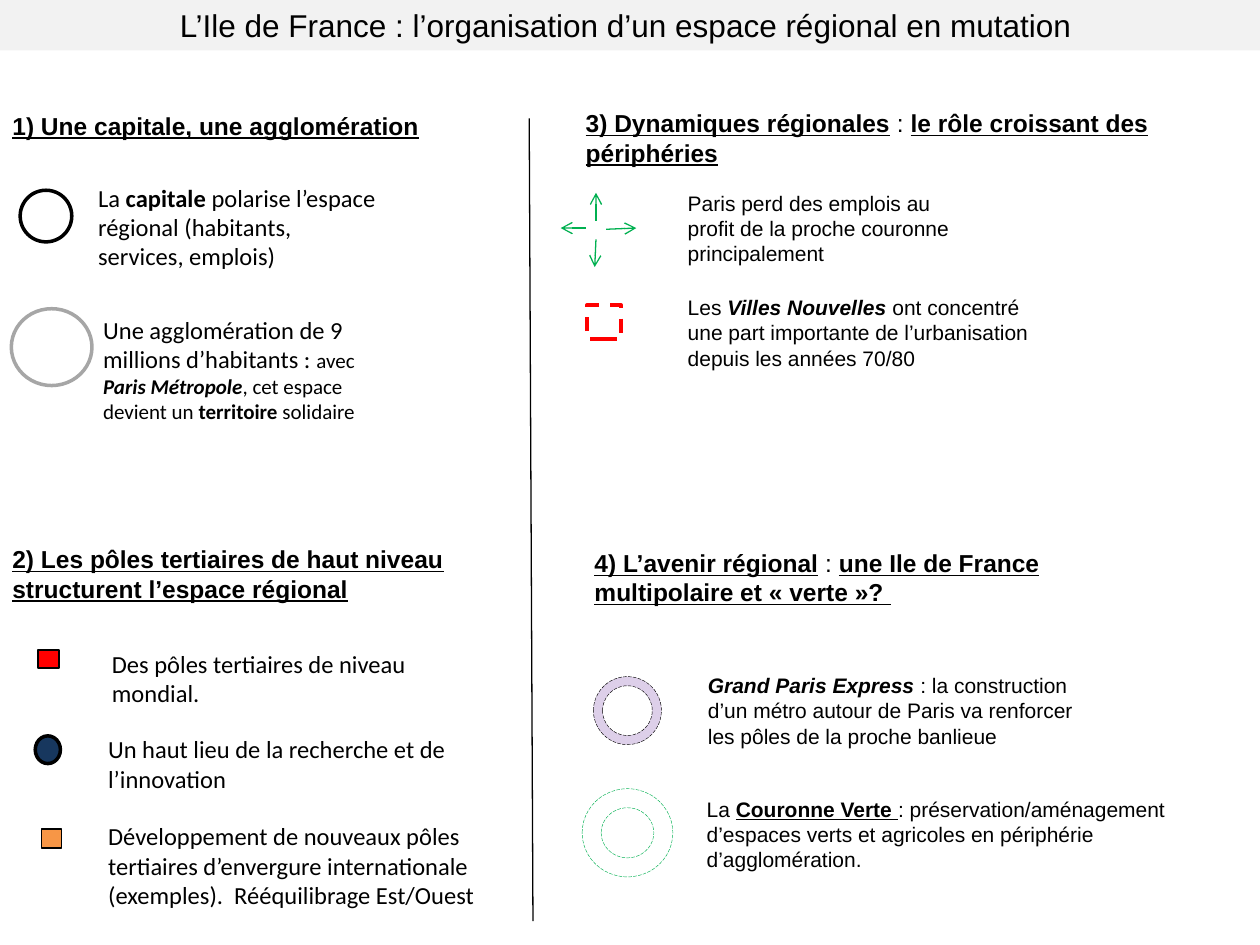
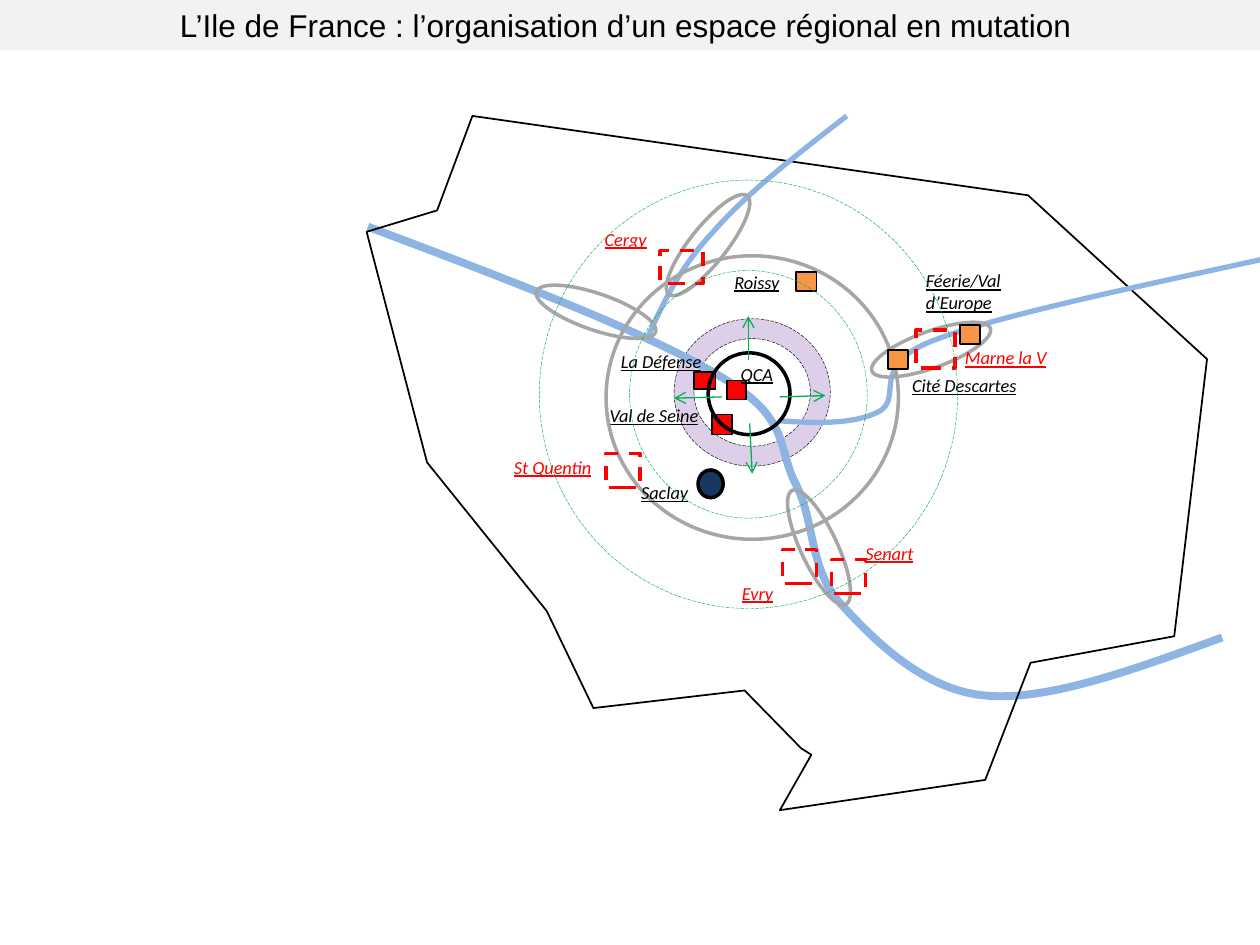
from dataclasses import dataclass

from lxml import etree
from pptx import Presentation
from pptx import util as u
from pptx.dml.color import RGBColor
from pptx.enum import dml, shapes, text
from pptx.oxml.ns import qn


@dataclass(frozen=True)
class Theme:
    cell: int = u.Inches(1)
    cols: float = 10
    rows: float = 7.5
    black: str = "000000"
    white: str = "FFFFFF"
    band: str = "F2F2F2"
    red: str = "FF0000"
    orange: str = "F79646"
    navy: str = "17375E"
    gray: str = "A6A6A6"
    green: str = "00B050"
    violet: str = "7030A0"
    water: str = "8EB4E3"
    sans: str = "Arial"
    body: str = "Calibri"
    title: float = 18
    head: float = 14
    note: float = 12
    label: float = 10.5
    thin: float = 0.75


T = Theme()
FORM = shapes.MSO_SHAPE
DASH = dml.MSO_LINE.DASH
LONG = dml.MSO_LINE.LONG_DASH

SIGNS = {
    "capital": (FORM.OVAL, None, T.black, 2, None),
    "city": (FORM.OVAL, T.white, T.gray, 2, None),
    "urban": (FORM.OVAL, None, T.gray, 2, None),
    "pole": (FORM.RECTANGLE, T.red, T.black, 1, None),
    "lab": (FORM.OVAL, T.navy, T.black, 2, None),
    "growth": (FORM.RECTANGLE, T.orange, T.black, 1, None),
    "town": (FORM.RECTANGLE, None, T.red, 2, DASH),
    "metro": (FORM.DONUT, T.violet, T.black, 0.25, LONG),
    "belt": (FORM.DONUT, None, T.green, 0.25, LONG),
}
RINGS = {"metro": 0.135, "belt": 0.216}
METRO_ALPHA = 23

TITLE = "L’Ile de France : l’organisation d’un espace régional en mutation "

HEADS = [
    ((0, 0.83, 3.89, 0.34), [("1) Une capitale, une agglomération", "bu")]),
    ((0, 4.27, 3.76, 0.57),
     [("2) Les pôles tertiaires de haut niveau structurent l’espace régional", "bu")]),
    ((4.55, 0.81, 5.45, 0.57),
     [("3) Dynamiques régionales", "bu"), (" : ", ""),
      ("le rôle croissant des périphéries", "bu")]),
    ((4.62, 4.3, 4.56, 0.57),
     [("4) L’avenir régional", "bu"), (" : ", ""),
      ("une Ile de France multipolaire et « verte »? ", "bu")]),
]

LEFT = [
    ((0.68, 1.4, 2.45, 0.81),
     [("La ", ""), ("capitale", "b"),
      (" polarise l’espace régional (habitants, services, emplois)", "")]),
    ((0.72, 2.45, 2.28, 0.98),
     [("Une agglomération de 9 millions d’habitants : ", ""), ("avec ", "", T.note),
      ("Paris Métropole", "bi", T.note), (", cet espace devient un ", "", T.note),
      ("territoire", "b", T.note), (" solidaire", "", T.note)]),
    ((0.79, 5.1, 2.96, 0.57), [("Des pôles tertiaires de niveau mondial.", "")]),
    ((0.76, 5.78, 2.96, 0.57),
     [("Un haut lieu de la recherche et de l’innovation", "")]),
    ((0.76, 6.47, 3.55, 0.81),
     [("Développement de nouveaux pôles tertiaires d’envergure internationale "
       "(exemples).  Rééquilibrage Est/Ouest", "")]),
]

RIGHT = [
    ((5.36, 1.46, 2.32, 0.7),
     [("Paris perd des emplois au profit de la proche couronne principalement", "")]),
    ((5.36, 2.29, 2.91, 0.71),
     [("Les ", ""), ("Villes Nouvelles ", "bi"),
      ("ont concentré une part importante de l’urbanisation depuis les années 70/80", "")]),
    ((5.52, 5.29, 3.3, 0.71),
     [("Grand Paris Express ", "bi"),
      (": la construction d’un métro autour de Paris va renforcer "
       "les pôles de la proche banlieue", "")]),
    ((5.51, 6.27, 4.49, 0.71),
     [("La ", ""), ("Couronne Verte ", "bu"),
      (": préservation/aménagement d’espaces verts et agricoles "
       "en périphérie d’agglomération.", "")]),
]

KEYS = [
    ("capital", (0.16, 1.51, 0.41, 0.41)),
    ("city", (0.09, 2.45, 0.64, 0.61)),
    ("pole", (0.3, 5.16, 0.17, 0.14)),
    ("lab", (0.28, 5.84, 0.2, 0.22)),
    ("growth", (0.33, 6.58, 0.16, 0.15)),
    ("town", (4.66, 2.42, 0.27, 0.27)),
    ("metro", (4.71, 5.37, 0.54, 0.54)),
    ("belt", (4.62, 6.26, 0.72, 0.7)),
]
KEY_FLOWS = [
    ((4.73, 1.75), (4.73, 1.53)), ((4.81, 1.82), (5.05, 1.81)),
    ((4.65, 1.81), (4.45, 1.81)), ((4.73, 1.9), (4.72, 2.12)),
]

SEINE = [
    (2.92, 1.8), (4.04, 2.22), (5.16, 2.65), (5.72, 2.99), (6.29, 3.33),
    (6.16, 3.55), (6.32, 3.85), (6.47, 4.15), (6.42, 4.51), (6.67, 4.79),
    (6.92, 5.06), (7.31, 5.47), (7.81, 5.52), (8.31, 5.57), (9.01, 5.31), (9.7, 5.06),
]
MARNE = [
    (10.01, 2.06), (8.96, 2.29), (7.9, 2.51), (7.39, 2.71), (6.89, 2.91),
    (7.18, 3.16), (6.97, 3.27), (6.77, 3.37), (6.47, 3.36), (6.18, 3.34),
]
OISE = [
    (6.72, 0.92), (6.32, 1.23), (5.92, 1.54), (5.66, 1.84),
    (5.39, 2.13), (5.26, 2.41), (5.13, 2.7),
]
REGION = [
    (3.75, 0.92), (8.16, 1.55), (9.58, 2.85), (9.32, 5.05), (8.18, 5.26),
    (7.82, 6.19), (6.19, 6.43), (6.44, 5.99), (6.36, 5.94), (5.91, 5.48),
    (4.71, 5.62), (4.34, 4.85), (3.39, 3.67), (2.91, 1.84), (3.47, 1.67),
]
POLES = [(5.65, 3.29, 0.16, 0.16), (5.51, 2.95, 0.17, 0.14), (5.77, 3.02, 0.15, 0.15)]
LOBES = [(6.89, 2.63, 340.2), (6, 4.2, 64.9), (5.12, 1.8, 308.5), (4.23, 2.33, 198.8)]
GROWTH = [(6.32, 2.16), (7.62, 2.58), (7.05, 2.78)]
TOWNS = [
    (5.24, 1.99, 0.34, 0.26), (7.27, 2.62, 0.31, 0.3), (6.6, 4.44, 0.27, 0.27),
    (6.21, 4.36, 0.27, 0.27), (4.81, 3.6, 0.27, 0.27),
]
CORE_NAMES = [
    ("Val de Seine", (4.74, 3.16, 1.01, 0.29)),
    ("QCA", (5.78, 2.83, 0.55, 0.29)),
    ("La Défense", (4.83, 2.73, 0.95, 0.28)),
]
OUTER_NAMES = [
    ("Saclay", (4.99, 3.77, 1.01, 0.29)),
    ("Roissy", (5.73, 2.1, 0.74, 0.28)),
    ("Féerie/Val d’Europe", (7.25, 2.09, 1.11, 0.47)),
    ("Cité Descartes", (7.14, 2.92, 1.47, 0.29)),
]
TOWN_NAMES = [
    ("Senart", (6.77, 4.25, 0.97, 0.29)),
    ("Evry", (5.79, 4.57, 0.56, 0.29)),
    ("Marne la V", (7.56, 2.7, 1.18, 0.29)),
    ("St Quentin", (3.98, 3.57, 1.03, 0.29)),
    ("Cergy", (4.7, 1.76, 0.64, 0.29)),
]
MAP_FLOWS = [
    ((5.95, 3.36), (5.97, 3.76)), ((6.19, 3.15), (6.55, 3.14)),
    ((5.94, 2.86), (5.94, 2.51)), ((5.73, 3.15), (5.35, 3.16)),
]


def grid(spots):
    return [round(spot * T.cell) for spot in spots]


def tint(color):
    return RGBColor.from_string(color)


def paint(shape, fill, line, width=1, dash=None):
    shape.shadow.inherit = False
    if fill:
        shape.fill.solid()
        shape.fill.fore_color.rgb = tint(fill)
    else:
        shape.fill.background()
    if line:
        shape.line.color.rgb = tint(line)
        shape.line.width = u.Pt(width)
        if dash:
            shape.line.dash_style = dash
    else:
        shape.line.fill.background()


def write(shape, runs, size, face, color=T.black):
    frame = shape.text_frame
    frame.word_wrap = True
    frame.auto_size = text.MSO_AUTO_SIZE.SHAPE_TO_FIT_TEXT
    para = frame.paragraphs[0]
    para.font.size = u.Pt(size)
    para.font.name = face
    para.font.color.rgb = tint(color)
    for words, marks, *small in runs:
        run = para.add_run()
        run.text = words
        if "b" in marks:
            run.font.bold = True
        if "i" in marks:
            run.font.italic = True
        if "u" in marks:
            run.font.underline = True
        if small:
            run.font.size = u.Pt(small[0])
    return para


def prose(slide, items, size, face):
    for box, runs in items:
        write(slide.shapes.add_textbox(*grid(box)), runs, size, face)


def names(slide, items, color=T.black):
    for name, box in items:
        area = slide.shapes.add_textbox(*grid(box))
        write(area, [(name, "iu")], T.label, T.body, color)


def sign(slide, kind, box, turn=0):
    form, fill, line, width, dash = SIGNS[kind]
    shape = slide.shapes.add_shape(form, *grid(box))
    paint(shape, fill, line, width, dash)
    shape.rotation = turn
    if kind in RINGS:
        shape.adjustments[0] = RINGS[kind]
    if kind == "metro":
        hue = shape.fill._xPr.find(qn("a:solidFill"))[0]
        etree.SubElement(hue, qn("a:alpha")).set("val", str(METRO_ALPHA * 1000))


def link(slide, start, end, color, arrow=False):
    line = slide.shapes.add_connector(
        shapes.MSO_CONNECTOR.STRAIGHT, *grid(start + end))
    line.line.color.rgb = tint(color)
    line.line.width = u.Pt(T.thin)
    props = line._element.spPr
    if arrow:
        etree.SubElement(props.find(qn("a:ln")), qn("a:tailEnd")).set("type", "arrow")
    etree.SubElement(props, qn("a:effectLst"))


def flows(slide, items):
    for start, end in items:
        link(slide, start, end, T.green, True)


def trace(slide, spots, color, width, close=False):
    first, *rest = [grid(spot) for spot in spots]
    pen = slide.shapes.build_freeform(*first)
    pen.add_line_segments(rest, close=close)
    shape = pen.convert_to_shape()
    paint(shape, None, color, width)
    return shape


def river(slide, knots, width):
    shape = trace(slide, knots, T.water, width)
    route = next(shape._element.iter(qn("a:path")))
    legs = route.findall(qn("a:lnTo"))
    for at in range(0, len(legs), 3):
        curve = etree.SubElement(route, qn("a:cubicBezTo"))
        for leg in legs[at:at + 3]:
            curve.append(leg[0])
            route.remove(leg)


def banner(slide):
    bar = slide.shapes.add_shape(FORM.RECTANGLE, *grid((0, 0, T.cols, 0.4)))
    paint(bar, T.band, None)
    para = write(bar, [(TITLE, "")], T.title, T.sans)
    para.alignment = text.PP_ALIGN.CENTER


def legend(slide):
    prose(slide, LEFT, T.head, T.body)
    prose(slide, HEADS, T.head, T.sans)
    prose(slide, RIGHT, T.note, T.sans)
    for kind, box in KEYS:
        sign(slide, kind, box)
    flows(slide, KEY_FLOWS)
    link(slide, (4.2, 0.94), (4.23, 7.31), T.black)
    banner(slide)


def region(slide):
    sign(slide, "metro", (5.35, 2.53, 1.24, 1.17))
    river(slide, SEINE, 4.5)
    trace(slide, REGION, T.black, 1, True)
    for box in POLES:
        sign(slide, "pole", box)
    names(slide, CORE_NAMES)
    river(slide, MARNE, 3)
    river(slide, OISE, 3)
    sign(slide, "capital", (5.62, 2.8, 0.65, 0.65))
    sign(slide, "urban", (4.81, 2.03, 2.32, 2.25))
    for left, top, turn in LOBES:
        sign(slide, "urban", (left, top, 1, 0.29), turn)
    for left, top in GROWTH:
        sign(slide, "growth", (left, top, 0.16, 0.15))
    names(slide, OUTER_NAMES)
    sign(slide, "lab", (5.54, 3.73, 0.2, 0.22))
    for box in TOWNS:
        sign(slide, "town", box)
    names(slide, TOWN_NAMES, T.red)
    flows(slide, MAP_FLOWS)
    sign(slide, "belt", (4.28, 1.43, 3.32, 3.4))
    banner(slide)


def main():
    deck = Presentation()
    deck.slide_width, deck.slide_height = grid((T.cols, T.rows))
    for draw in (legend, region):
        draw(deck.slides.add_slide(deck.slide_layouts[6]))
    deck.save("out.pptx")


if __name__ == "__main__":
    main()
